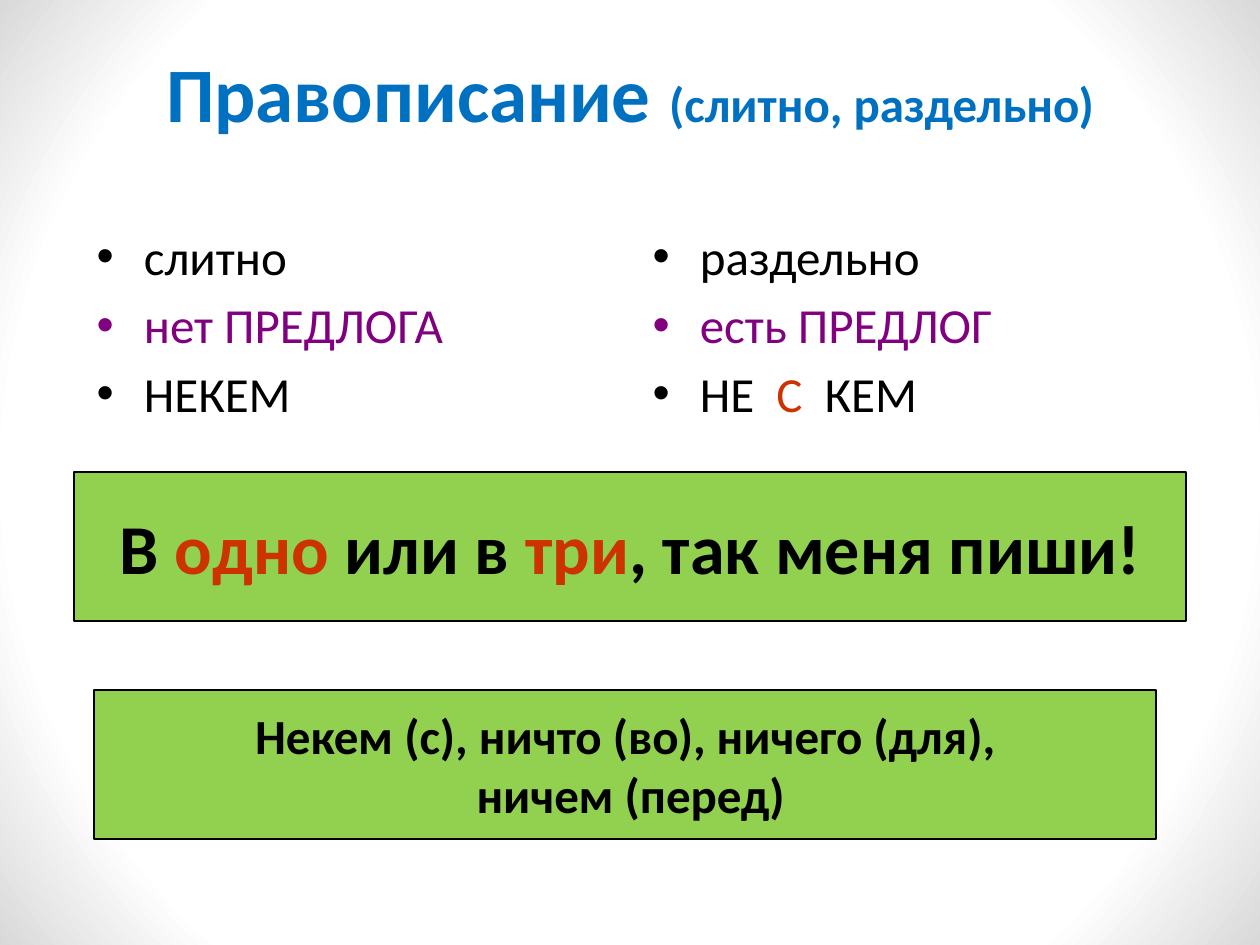
from lxml import etree
from pptx import Presentation
from pptx import util as u
from pptx.dml import color
from pptx.enum import shapes, text
from pptx.oxml import ns

PX = 914400 / 126
BLACK, BLUE, PURPLE, RED = "000000", "0070C0", "800080", "CC3300"
GREEN, WHITE, GREY = "92D050", "FFFFFF", "D9D9D9"


def px(*lengths):
    return [u.Emu(round(length * PX)) for length in lengths]


def rgb(value):
    return color.RGBColor.from_string(value)


class Page:
    font = "Calibri"

    def __init__(self, slide):
        self.slide = slide

    def backdrop(self, inner, outer, start):
        fill = self.slide.background.fill
        fill.gradient()
        for stop, value, position in zip(fill.gradient_stops, (inner, outer), (start, 1)):
            stop.color.rgb = rgb(value)
            stop.position = position
        gradient = self.slide.element.find(".//" + ns.qn("a:gradFill"))
        gradient.remove(gradient.find(ns.qn("a:lin")))
        circle = etree.SubElement(gradient, ns.qn("a:path"), path="circle")
        etree.SubElement(circle, ns.qn("a:fillToRect"), l="50000", t="50000", r="50000", b="50000")

    def set_lines(self, frame, lines, size, bold=False, align=None, gap=0):
        frame.auto_size = text.MSO_AUTO_SIZE.NONE
        for index, line in enumerate(lines):
            paragraph = frame.paragraphs[0] if index == 0 else frame.add_paragraph()
            paragraph.alignment = align
            paragraph.space_before = u.Pt(gap if index else 0)
            for words, value, *own_size in line:
                run = paragraph.add_run()
                run.text = words
                run.font.name = self.font
                run.font.size = u.Pt(own_size[0] if own_size else size)
                run.font.bold = bold
                run.font.color.rgb = rgb(value)

    def place(self, holder, box):
        holder.left, holder.top, holder.width, holder.height = px(*box)
        return holder.text_frame

    def title(self, box, line, size):
        frame = self.place(self.slide.shapes.title, box)
        frame.vertical_anchor = text.MSO_ANCHOR.MIDDLE
        self.set_lines(frame, [line], size, True, text.PP_ALIGN.CENTER)

    def bullets(self, index, box, lines, size):
        frame = self.place(self.slide.placeholders[index], box)
        self.set_lines(frame, lines, size, gap=size * 0.2)

    def banner(self, box, lines, size):
        panel = self.slide.shapes.add_shape(shapes.MSO_SHAPE.RECTANGLE, *px(*box))
        panel.shadow.inherit = False
        panel.fill.solid()
        panel.fill.fore_color.rgb = rgb(GREEN)
        panel.line.color.rgb = rgb(BLACK)
        panel.line.width = u.Pt(0.75)
        frame = panel.text_frame
        frame.word_wrap = False
        frame.vertical_anchor = text.MSO_ANCHOR.MIDDLE
        self.set_lines(frame, lines, size, True, text.PP_ALIGN.CENTER)


def main():
    deck = Presentation()
    deck.slide_width, deck.slide_height = px(1260, 945)
    page = Page(deck.slides.add_slide(deck.slide_layouts[3]))
    page.backdrop(WHITE, GREY, 0.79)
    page.title((63, 21, 1134, 142),
               [("Правописание ", BLUE), ("(слитно, раздельно)", BLUE, 28)], 44)
    page.bullets(1, (84, 220, 536, 242),
                 [[("слитно", BLACK)], [("нет ПРЕДЛОГА", PURPLE)], [("НЕКЕМ", BLACK)]], 28)
    page.bullets(2, (640, 220, 536, 252),
                 [[("раздельно", BLACK)], [("есть ПРЕДЛОГ", PURPLE)],
                  [("НЕ  ", BLACK), ("С", RED), ("  КЕМ", BLACK)]], 28)
    page.banner((74, 472, 1112, 149),
                [[("В ", BLACK), ("одно", RED), (" или в ", BLACK),
                  ("три", RED), (", так меня пиши!", BLACK)]], 40)
    page.banner((94, 690, 1062, 149),
                [[("Некем (с), ничто (во), ничего (для),", BLACK)],
                 [(" ничем (перед)", BLACK)]], 28)
    deck.save("out.pptx")


if __name__ == "__main__":
    main()
